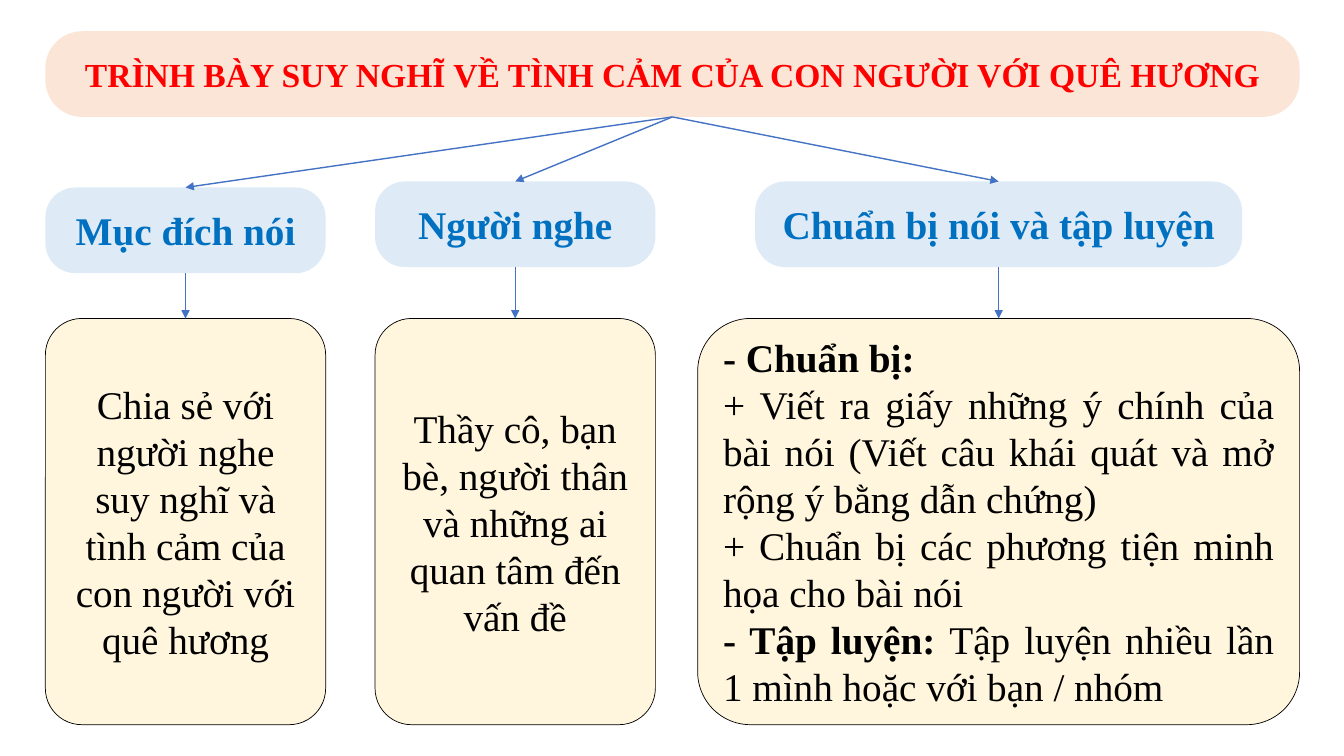
from dataclasses import dataclass

from lxml.etree import SubElement
from pptx import Presentation
from pptx.dml.color import RGBColor as Color
from pptx.enum.shapes import MSO_CONNECTOR as Line, MSO_SHAPE as Shape
from pptx.enum.text import MSO_ANCHOR as Anchor, PP_ALIGN as Align
from pptx.oxml.ns import qn
from pptx.util import Inches, Pt


@dataclass(frozen=True)
class Theme:
    """Hold the colours, font and type sizes of the slide."""
    font: str = "Times New Roman"
    peach: str = "FBE5D6"
    sky: str = "DEEBF7"
    cream: str = "FFF6DD"
    red: str = "FF0000"
    blue: str = "0070C0"
    black: str = "000000"
    arrow: str = "4472C4"
    title: int = 24
    body: int = 28


THEME = Theme()
TITLE = "TRÌNH BÀY SUY NGHĨ VỀ TÌNH CẢM CỦA CON NGƯỜI VỚI QUÊ HƯƠNG"
GOAL = "Chia sẻ với người nghe suy nghĩ và tình cảm của con người với quê hương"
CROWD = "Thầy cô, bạn bè, người thân và những ai quan tâm đến vấn đề"
STEPS = [
    [("- Chuẩn bị:", True)],
    [("+ Viết ra giấy những ý chính của bài nói "
      "(Viết câu khái quát và mở rộng ý bằng dẫn chứng)", False)],
    [("+ Chuẩn bị các phương tiện minh họa cho bài nói", False)],
    [("- Tập luyện: ", True),
     ("Tập luyện nhiều lần 1 mình hoặc với bạn / nhóm", False)],
]
HEAD_H = 0.85
TITLE_TOP = 0.31
BODY_TOP, BODY_H = 3.16, 4.03
MID = 6.67


def write(shape, paras, size=THEME.body, color=THEME.black, align=Align.CENTER):
    """Write paragraphs of (text, bold) runs into a shape."""
    frame = shape.text_frame
    frame.word_wrap = True
    frame.vertical_anchor = Anchor.MIDDLE
    for i, runs in enumerate(paras):
        para = frame.add_paragraph() if i else frame.paragraphs[0]
        para.alignment = align
        for text, bold in runs:
            run = para.add_run()
            run.text = text
            run.font.name = THEME.font
            run.font.size = Pt(size)
            run.font.bold = bold
            run.font.color.rgb = Color.from_string(color)


def add_box(slide, left, top, width, height, fill, curve, edge=None):
    """Add a rounded box and return it."""
    box = slide.shapes.add_shape(
        Shape.ROUNDED_RECTANGLE,
        Inches(left), Inches(top), Inches(width), Inches(height))
    box.adjustments[0] = curve
    box.shadow.inherit = False
    box.fill.solid()
    box.fill.fore_color.rgb = Color.from_string(fill)
    if edge:
        box.line.color.rgb = Color.from_string(edge)
        box.line.width = Pt(0.5)
    else:
        box.line.fill.background()
    return box


def add_arrow(slide, x1, y1, x2, y2):
    """Add a straight arrow from one point to another."""
    arrow = slide.shapes.add_connector(
        Line.STRAIGHT, Inches(x1), Inches(y1), Inches(x2), Inches(y2))
    arrow.line.color.rgb = Color.from_string(THEME.arrow)
    arrow.line.width = Pt(1)
    SubElement(arrow.line._get_or_add_ln(), qn("a:tailEnd"), type="triangle")
    SubElement(arrow._element.spPr, qn("a:effectLst"))


def add_branch(slide, name, paras, left, width, top=1.8, head=None,
               align=Align.CENTER):
    """Add a heading, its body box and the arrows that lead to them."""
    head = head or width
    mid = left + width / 2
    label = add_box(slide, mid - head / 2, top, head, HEAD_H, THEME.sky, 0.35)
    write(label, [[(name, True)]], color=THEME.blue)
    body = add_box(slide, left, BODY_TOP, width, BODY_H, THEME.cream, 0.13,
                   edge=THEME.black)
    write(body, paras, align=align)
    add_arrow(slide, MID, TITLE_TOP + HEAD_H, mid, top)
    add_arrow(slide, mid, top + HEAD_H, mid, BODY_TOP)


def main():
    """Build the slide and save it."""
    deck = Presentation()
    deck.slide_width, deck.slide_height = Inches(13.33), Inches(7.5)
    slide = deck.slides.add_slide(deck.slide_layouts[6])
    title = add_box(slide, 0.45, TITLE_TOP, 12.44, HEAD_H, THEME.peach, 0.43)
    write(title, [[(TITLE, True)]], size=THEME.title, color=THEME.red)
    add_branch(slide, "Mục đích nói", [[(GOAL, False)]], 0.45, 2.78, top=1.86)
    add_branch(slide, "Người nghe", [[(CROWD, False)]], 3.72, 2.78)
    add_branch(slide, "Chuẩn bị nói và tập luyện", STEPS, 6.92, 5.97,
               head=4.83, align=Align.JUSTIFY)
    deck.save("out.pptx")


if __name__ == "__main__":
    main()
